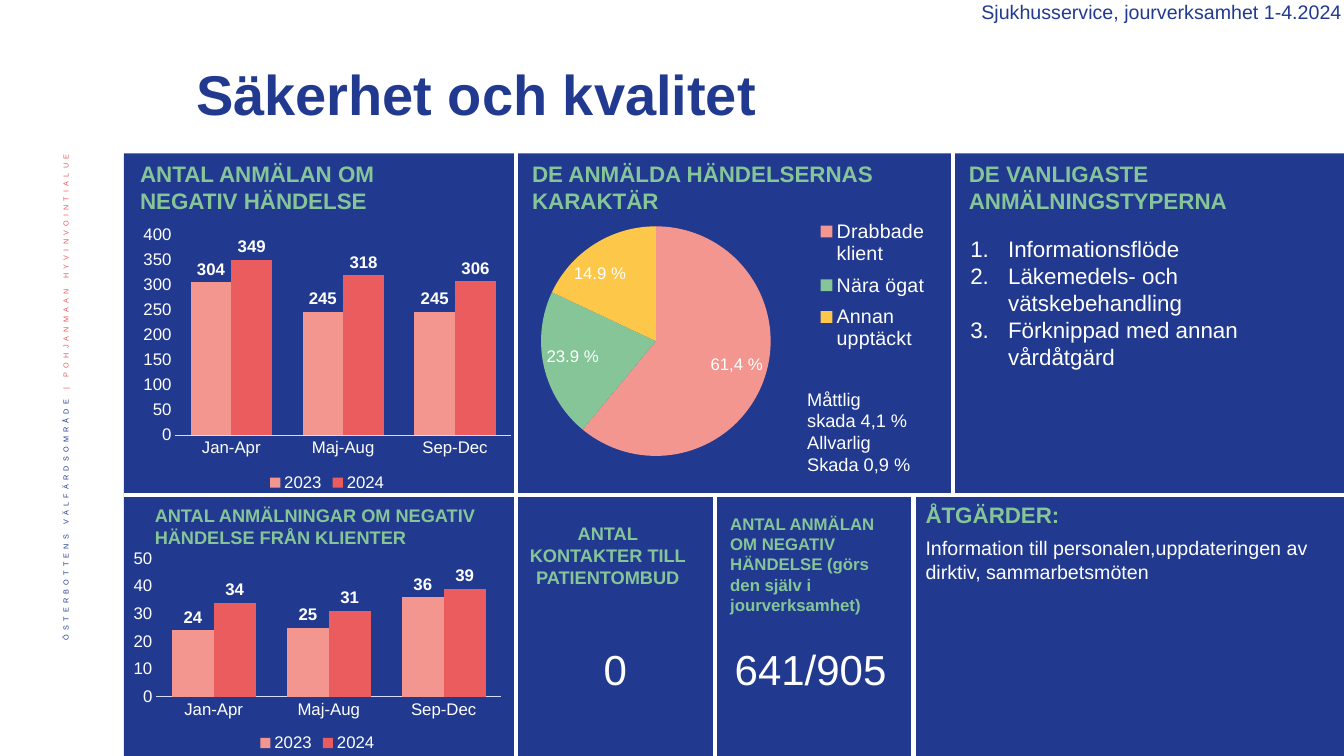
from dataclasses import dataclass

from lxml import etree
from pptx import Presentation
from pptx.chart.data import CategoryChartData
from pptx.dml.color import RGBColor
from pptx.enum.chart import XL_CHART_TYPE as ChartType
from pptx.enum.chart import XL_LABEL_POSITION as LabelPos
from pptx.enum.chart import XL_LEGEND_POSITION as LegendPos
from pptx.enum.chart import XL_TICK_MARK as TickMark
from pptx.enum.shapes import MSO_CONNECTOR as Connector
from pptx.enum.shapes import MSO_SHAPE as Shape
from pptx.enum.text import MSO_ANCHOR as Anchor
from pptx.enum.text import PP_ALIGN as Align
from pptx.oxml import parse_xml
from pptx.oxml.ns import nsdecls, qn
from pptx.util import Pt

NAVY = RGBColor(0x21, 0x3A, 0x8F)
WHITE = RGBColor(0xFF, 0xFF, 0xFF)
GREEN = RGBColor(0x85, 0xC5, 0x98)
PINK = RGBColor(0xF3, 0x96, 0x90)
RED = RGBColor(0xEB, 0x5C, 0x5F)
YELLOW = RGBColor(0xFD, 0xC8, 0x4A)
AXIS_GREY = RGBColor(0xD6, 0xDD, 0xF6)
FONT = "Arial"
PERIODS = ["Jan-Apr", "Maj-Aug", "Sep-Dec"]
SLIDE_W, SLIDE_H = 960, 540
PANEL_LEFT, HEADER_H, ROW_Y = 88.5, 109.5, 353.5


@dataclass
class Label:
    text: str
    left: float
    top: float
    width: float
    height: float
    size: float
    color: RGBColor = WHITE
    bold: bool = False
    align: Align = Align.LEFT


@dataclass
class Columns:
    left: float
    top: float
    width: float
    height: float
    maximum: int
    step: int
    values: dict[str, list[int]]


@dataclass
class Slice:
    name: str
    value: int
    label: str
    color: RGBColor


LABELS = [
    Label("DE ANMÄLDA HÄNDELSERNAS KARAKTÄR", 373, 111, 301, 46, 16, GREEN, True),
    Label("ANTAL ANMÄLAN OM NEGATIV HÄNDELSE", 93, 111, 224, 46, 16, GREEN, True),
    Label("DE VANLIGASTE ANMÄLNINGSTYPERNA", 685, 111, 257, 46, 16, GREEN, True),
    Label("ANTAL KONTAKTER TILL PATIENTOMBUD", 369.5, 369.5, 129, 55, 13, GREEN, True,
          Align.CENTER),
    Label("0", 368.5, 456.5, 142, 44, 30, align=Align.CENTER),
    Label("641/905", 508, 456.5, 142, 44, 30, align=Align.CENTER),
    Label("ÅTGÄRDER:", 654, 354.5, 290, 27, 16, GREEN, True),
    Label("Information till personalen,uppdateringen av dirktiv, sammarbetsmöten",
          654, 379.5, 306, 41, 14),
    Label("ANTAL ANMÄLNINGAR OM NEGATIV HÄNDELSE FRÅN KLIENTER",
          103.5, 357, 274, 39, 13, GREEN, True),
    Label("ANTAL ANMÄLAN OM NEGATIV HÄNDELSE (görs den själv i jourverksamhet)",
          514.5, 363.5, 134, 80, 12, GREEN, True),
    Label("Måttlig\nskada 4,1 %\nAllvarlig\nSkada 0,9 %", 569.5, 273.5, 112, 75, 13),
]
COLUMN_CHARTS = [
    Columns(97, 157, 273.5, 197, 400, 50,
            {"2023": [304, 245, 245], "2024": [349, 318, 306]}),
    Columns(90, 389.5, 273.5, 150.5, 50, 10,
            {"2023": [24, 25, 36], "2024": [34, 31, 39]}),
]
SLICES = [
    Slice("Drabbade klient", 61, "61,4 %", PINK),
    Slice("Nära ögat", 21, "23.9 %", GREEN),
    Slice("Annan upptäckt", 18, "14.9 %", YELLOW),
]
# x, top, bottom of each vertical divider
DIVIDERS = [(368.5, HEADER_H, SLIDE_H), (680.5, HEADER_H, ROW_Y),
            (510.5, ROW_Y, SLIDE_H), (652.5, ROW_Y, SLIDE_H)]


def set_font(font, size: float, color: RGBColor, bold: bool = False) -> None:
    font.name, font.size, font.bold = FONT, Pt(size), bold
    font.color.rgb = color


def add_label(slide, item: Label):
    sp = slide.shapes.add_textbox(Pt(item.left), Pt(item.top), Pt(item.width), Pt(item.height))
    tf = sp.text_frame
    tf.word_wrap = True
    tf.text = item.text
    for p in tf.paragraphs:
        p.alignment = item.align
        for r in p.runs:
            set_font(r.font, item.size, item.color, item.bold)
    return sp


def add_block(slide, left: float, top: float, height: float, color: RGBColor) -> None:
    """Add a plain rectangle reaching the right edge of the slide."""
    sp = slide.shapes.add_shape(Shape.RECTANGLE, Pt(left), Pt(top),
                                Pt(SLIDE_W - left), Pt(height))
    sp.shadow.inherit = False
    sp.fill.solid()
    sp.fill.fore_color.rgb = color
    sp.line.fill.background()


def add_divider(slide, x1: float, y1: float, x2: float, y2: float) -> None:
    line = slide.shapes.add_connector(Connector.STRAIGHT, Pt(x1), Pt(y1), Pt(x2), Pt(y2))
    line.line.color.rgb = WHITE
    line.line.width = Pt(3)
    etree.SubElement(line._element.spPr, qn("a:effectLst"))


def add_side_text(slide) -> None:
    sp = add_label(slide, Label("", 30, 99, 37.5, 412.5, 9))
    tf = sp.text_frame
    tf.vertical_anchor = Anchor.MIDDLE
    tf._txBody.bodyPr.set("vert", "vert270")
    p = tf.paragraphs[0]
    p.alignment, p.line_spacing = Align.RIGHT, 0.9
    for text, color in (("ÖSTERBOTTENS VÄLFÄRDSOMRÅDE ", NAVY),
                        ("| POHJANMAAN HYVINVOINTIALUE ", RED)):
        r = p.add_run()
        r.text = text
        set_font(r.font, 9, color)
        r._r.get_or_add_rPr().set("baseline", "30000")
        r._r.get_or_add_rPr().set("spc", "300")


def add_numbered_list(slide) -> None:
    text = "Informationsflöde\nLäkemedels- och vätskebehandling\nFörknippad med annan vårdåtgärd"
    sp = add_label(slide, Label(text, 686, 164.5, 274, 126, 16))
    for p in sp.text_frame.paragraphs:
        pPr = p._p.get_or_add_pPr()
        pPr.set("marL", str(Pt(27)))
        pPr.set("indent", str(-Pt(27)))
        etree.SubElement(pPr, qn("a:buFont")).set("typeface", FONT)
        etree.SubElement(pPr, qn("a:buAutoNum")).set("type", "arabicPeriod")


def add_chart(slide, kind: ChartType, box: tuple, data: CategoryChartData,
              legend_pos: LegendPos, legend_size: float):
    chart = slide.shapes.add_chart(kind, *(Pt(v) for v in box), data).chart
    set_font(chart.font, 10, NAVY)
    chart.has_title = False
    chart.has_legend = True
    chart.legend.position = legend_pos
    chart.legend.include_in_layout = False
    set_font(chart.legend.font, legend_size, WHITE)
    return chart


def add_columns(slide, item: Columns) -> None:
    data = CategoryChartData()
    data.categories = PERIODS
    for year, values in item.values.items():
        data.add_series(year, values)
    chart = add_chart(slide, ChartType.COLUMN_CLUSTERED,
                      (item.left, item.top, item.width, item.height), data,
                      LegendPos.BOTTOM, 12)
    for axis in (chart.category_axis, chart.value_axis):
        axis.has_major_gridlines = False
        axis.major_tick_mark = axis.minor_tick_mark = TickMark.NONE
        set_font(axis.tick_labels.font, 12, WHITE)
    chart.category_axis.format.line.color.rgb = AXIS_GREY
    chart.category_axis.format.line.width = Pt(0.75)
    axis = chart.value_axis
    axis.format.line.fill.background()
    axis.minimum_scale, axis.maximum_scale, axis.major_unit = 0, item.maximum, item.step
    plot = chart.plots[0]
    plot.gap_width, plot.overlap, plot.vary_by_categories = 75, 0, False
    for series, color in zip(plot.series, (PINK, RED)):
        series.format.fill.solid()
        series.format.fill.fore_color.rgb = color
        labels = series.data_labels
        labels.show_value = True
        labels.position = LabelPos.OUTSIDE_END
        set_font(labels.font, 12, WHITE, True)


def set_layout(parent, index: int, **place) -> None:
    """Place a chart part by fractions of the chart area."""
    for old in parent.findall(qn("c:layout")):
        parent.remove(old)
    values = "".join(f'<c:{key} val="{value}"/>' for key, value in place.items())
    parent.insert(index, parse_xml(
        f'<c:layout {nsdecls("c")}><c:manualLayout>{values}</c:manualLayout></c:layout>'))


def add_pie(slide) -> None:
    data = CategoryChartData()
    data.categories = [s.name for s in SLICES]
    data.add_series("Series 1", [s.value for s in SLICES])
    chart = add_chart(slide, ChartType.PIE, (371, 142.5, 309.5, 204.5), data,
                      LegendPos.RIGHT, 14)
    plot = chart.plots[0]
    plot.vary_by_categories = True
    for i, item in enumerate(SLICES):
        point = plot.series[0].points[i]
        point.format.fill.solid()
        point.format.fill.fore_color.rgb = item.color
        tf = point.data_label.text_frame
        tf.text = item.label
        set_font(tf.paragraphs[0].runs[0].font, 12, WHITE)
        point.data_label.position = LabelPos.BEST_FIT
    set_layout(chart._chartSpace.chart.plotArea, 0, layoutTarget="inner",
               xMode="edge", yMode="edge", x=0.05, y=0.08, w=0.53, h=0.83)
    set_layout(chart.legend._element, 1,
               xMode="edge", yMode="edge", x=0.67, y=0.04, w=0.29, h=0.52)


def main() -> None:
    prs = Presentation()
    prs.slide_width, prs.slide_height = Pt(SLIDE_W), Pt(SLIDE_H)
    slide = prs.slides.add_slide(prs.slide_layouts[6])
    add_side_text(slide)
    add_block(slide, PANEL_LEFT, 0, SLIDE_H, NAVY)
    add_block(slide, 83, 0, HEADER_H, WHITE)
    add_divider(slide, PANEL_LEFT, ROW_Y, SLIDE_W, ROW_Y)
    for x, top, bottom in DIVIDERS:
        add_divider(slide, x, top, x, bottom)
    title = add_label(slide, Label("Säkerhet och kvalitet", 133, 34, 718.5, 71, 40, NAVY, True))
    title.text_frame.vertical_anchor = Anchor.MIDDLE
    title.text_frame.paragraphs[0].line_spacing = 0.9
    unit = add_label(slide, Label("Sjukhusservice, jourverksamhet 1-4.2024",
                                  537, 0, 423, 21, 14, NAVY, align=Align.RIGHT))
    unit.text_frame.margin_top, unit.text_frame.margin_right = Pt(0), Pt(1.5)
    add_pie(slide)
    for columns in COLUMN_CHARTS:
        add_columns(slide, columns)
    for item in LABELS:
        add_label(slide, item)
    add_numbered_list(slide)
    prs.save("out.pptx")


if __name__ == "__main__":
    main()
